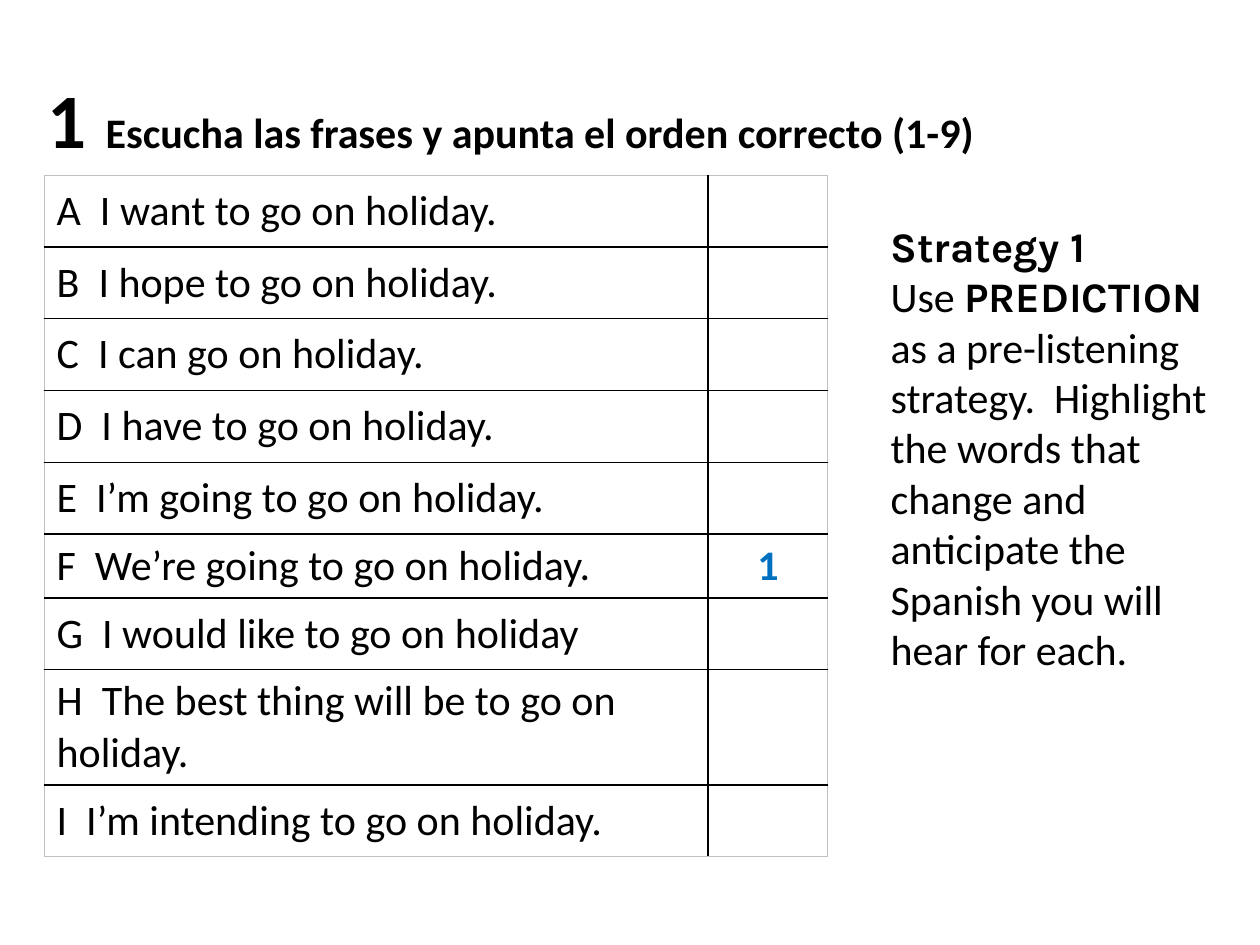
from lxml.etree import SubElement as Sub
from pptx import Presentation
from pptx.dml.color import RGBColor
from pptx.enum.text import MSO_ANCHOR as Anchor, PP_ALIGN as Align
from pptx.oxml.ns import qn
from pptx.util import Inches, Pt

BLACK = RGBColor(0, 0, 0)
BLUE = RGBColor(0x00, 0x70, 0xC0)
GREY = RGBColor(0xC0, 0xC0, 0xC0)

# Content
PHRASES = [
    "I want to go on holiday.",
    "I hope to go on holiday.",
    "I can go on holiday.",
    "I have to go on holiday.",
    "I’m going to go on holiday.",
    "We’re going to go on holiday.",
    "I would like to go on holiday",
    "The best thing will be to go on holiday.",
    "I’m intending to go on holiday.",
]
ANSWERS = {"F": "1"}
TASK = "  Escucha las frases y apunta el orden correcto (1-9)"
ADVICE = (" as a pre-listening strategy.  Highlight the words that change "
          "and anticipate the Spanish you will hear for each.")
WIDTHS = (5.27, 0.95)
TALL, SHORT = 0.57, 0.45


def write(para, text, size=24, font="Calibri", color=BLACK, bold=False):
    run = para.add_run()
    run.text = text
    run.font.size = Pt(size)
    run.font.name = font
    run.font.color.rgb = color
    run.font.bold = bold


def add_box(slide, left, top, width, height):
    box = slide.shapes.add_textbox(*map(Inches, (left, top, width, height)))
    box.text_frame.word_wrap = True
    return box.text_frame.paragraphs[0]


def set_edge(cell, side, outer):
    line = Sub(cell._tc.get_or_add_tcPr(), qn("a:ln" + side),
               w=str(Pt(0.5 if outer else 1)))
    fill = Sub(line, qn("a:solidFill"))
    Sub(fill, qn("a:srgbClr"), val=str(GREY if outer else BLACK))


def main():
    deck = Presentation()
    deck.slide_width, deck.slide_height = Inches(10), Inches(7.5)
    slide = deck.slides.add_slide(deck.slide_layouts[6])

    # Phrase table
    count = len(PHRASES)
    frame = slide.shapes.add_table(count, 2, Inches(0.35), Inches(1.39),
                                   Inches(sum(WIDTHS)), Inches(TALL * count))
    table = frame.table
    table.first_row = table.horz_banding = False
    for col, width in zip(table.columns, WIDTHS):
        col.width = Inches(width)
    for i, phrase in enumerate(PHRASES):
        letter = "ABCDEFGHI"[i]
        answer = ANSWERS.get(letter)
        table.rows[i].height = Inches(SHORT if answer else TALL)
        for j in range(2):
            cell = table.cell(i, j)
            cell.vertical_anchor = Anchor.MIDDLE
            for side, outer in (("L", j == 0), ("R", j == 1),
                                ("T", i == 0), ("B", i == count - 1)):
                set_edge(cell, side, outer)
            cell.fill.background()
        write(table.cell(i, 0).text_frame.paragraphs[0], f"{letter}  {phrase}")
        if answer:
            para = table.cell(i, 1).text_frame.paragraphs[0]
            para.alignment = Align.CENTER
            write(para, answer, color=BLUE, bold=True)

    # Task heading
    para = add_box(slide, 0.28, 0.52, 7.72, 0.84)
    write(para, "1", size=44, bold=True)
    write(para, TASK, bold=True)

    # Strategy note
    para = add_box(slide, 6.97, 1.7, 2.87, 4.14)
    write(para, "Strategy 1", font="Karla", bold=True)
    para.add_line_break()
    write(para, "Use ")
    write(para, "PREDICTION", font="Karla", bold=True)
    write(para, ADVICE)

    deck.save("out.pptx")


if __name__ == "__main__":
    main()
